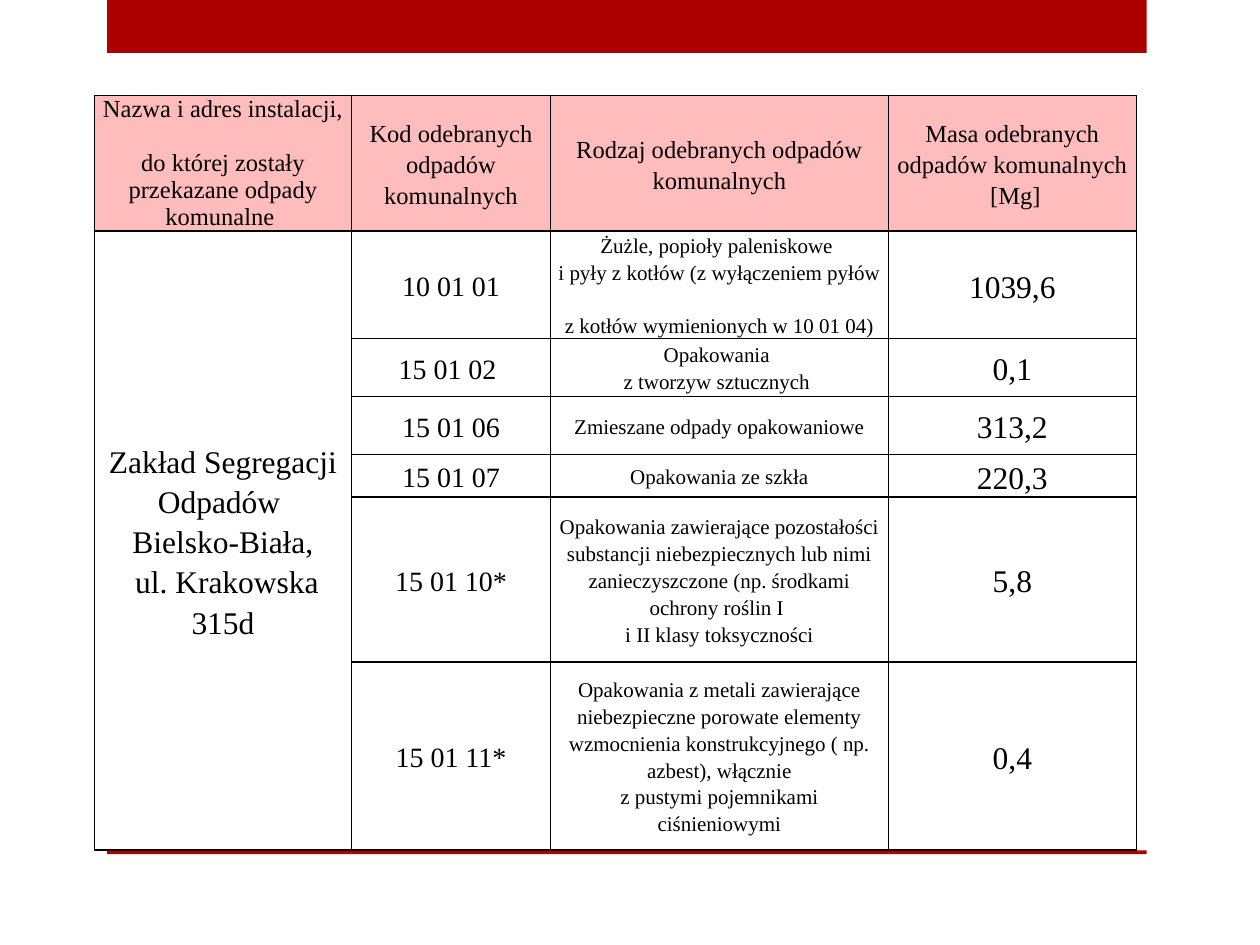
from copy import deepcopy

from lxml.etree import SubElement
from pptx import Presentation
from pptx.dml.color import RGBColor
from pptx.enum.shapes import MSO_SHAPE
from pptx.enum.text import MSO_ANCHOR, PP_ALIGN
from pptx.oxml.ns import qn
from pptx.util import Pt

FONT = "Times New Roman"
RED, PINK, BLACK = "AD0101", "FFBCBC", "000000"
BARS = [(0, 30.24), (486, 2.16)]
COLS = [146.88, 113.76, 192.96, 141.84]
ROWS = [64.8, 59.04, 33.12, 33.12, 24.48, 94.32, 107.28]
HEAD = [
    ["Nazwa i adres instalacji, \ndo której zostały przekazane odpady komunalne "],
    ["Kod odebranych odpadów komunalnych"],
    ["Rodzaj odebranych odpadów komunalnych"],
    ["Masa odebranych odpadów komunalnych", " [Mg]"],
]
PLANT = ["Zakład Segregacji Odpadów \nBielsko-Biała,", " ul. Krakowska 315d"]
WASTE = [
    ("10 01 01", ["Żużle, popioły paleniskowe \ni pyły z kotłów (z wyłączeniem pyłów \n"
                  "z kotłów wymienionych w 10 01 04)"], "1039,6"),
    ("15 01 02 ", ["Opakowania \nz tworzyw sztucznych "], "0,1"),
    ("15 01 06", ["Zmieszane odpady opakowaniowe"], "313,2"),
    ("15 01 07", ["Opakowania ze szkła"], "220,3"),
    ("15 01 10*", ["Opakowania zawierające pozostałości substancji niebezpiecznych lub nimi "
                   "zanieczyszczone (np. środkami ochrony roślin I ",
                   "i II klasy toksyczności"], "5,8"),
    ("15 01 11*", ["Opakowania z metali zawierające niebezpieczne porowate elementy wzmocnienia "
                   "konstrukcyjnego ( np. azbest), włącznie",
                   "z pustymi pojemnikami ciśnieniowymi"], "0,4"),
]


def color(code):
    return RGBColor.from_string(code)


def add_bar(slide, top, high):
    bar = slide.shapes.add_shape(MSO_SHAPE.RECTANGLE, Pt(61.2), Pt(top), Pt(594), Pt(high))
    bar.shadow.inherit = False
    bar.fill.solid()
    bar.fill.fore_color.rgb = color(RED)
    bar.line.fill.background()


def add_lines(para, text, size):
    for num, line in enumerate(text.split("\n")):
        if num:
            para.add_line_break()
            para._p[-1].append(deepcopy(run._r.rPr))
        run = para.add_run()
        run.text = line
        run.font.name = FONT
        run.font.size = Pt(size)
        run.font.color.rgb = color(BLACK)


def add_edges(cell):
    props = cell._tc.get_or_add_tcPr()
    for num, side in enumerate(("lnL", "lnR", "lnT", "lnB")):
        edge = SubElement(props, qn("a:" + side), w=str(Pt(1)))
        fill = SubElement(edge, qn("a:solidFill"))
        SubElement(fill, qn("a:srgbClr"), val=BLACK)
        props.remove(edge)
        props.insert(num, edge)


def fill_cell(cell, paras, size, space=1.15, anchor=MSO_ANCHOR.MIDDLE):
    cell.vertical_anchor = anchor
    frame = cell.text_frame
    for num, text in enumerate(paras):
        para = frame.add_paragraph() if num else frame.paragraphs[0]
        para.alignment = PP_ALIGN.CENTER
        if space:
            para.line_spacing = space
        add_lines(para, text, size)


def add_grid(slide):
    frame = slide.shapes.add_table(len(ROWS), len(COLS), Pt(54), Pt(54.72),
                                   Pt(sum(COLS)), Pt(sum(ROWS)))
    grid = frame.table
    grid.first_row = grid.horz_banding = False
    for col, wide in zip(grid.columns, COLS):
        col.width = Pt(wide)
    for num, (row, high) in enumerate(zip(grid.rows, ROWS)):
        row.height = Pt(high)
        for cell in row.cells:
            cell.margin_left = cell.margin_right = Pt(3.6)
            cell.margin_top = cell.margin_bottom = 0
            if num:
                cell.fill.background()
            else:
                cell.fill.solid()
                cell.fill.fore_color.rgb = color(PINK)
            add_edges(cell)
    for num, paras in enumerate(HEAD):
        fill_cell(grid.cell(0, num), paras, 14, 1.15 if num else None)
    grid.cell(1, 0).merge(grid.cell(len(WASTE), 0))
    fill_cell(grid.cell(1, 0), PLANT, 18)
    for num, (code, kind, mass) in enumerate(WASTE, 1):
        fill_cell(grid.cell(num, 1), [code], 16)
        fill_cell(grid.cell(num, 2), kind, 12,
                  anchor=MSO_ANCHOR.BOTTOM if num == 1 else MSO_ANCHOR.MIDDLE)
        fill_cell(grid.cell(num, 3), [mass], 18)


def main():
    deck = Presentation()
    deck.slide_width, deck.slide_height = Pt(720), Pt(540)
    slide = deck.slides.add_slide(deck.slide_layouts[6])
    for top, high in BARS:
        add_bar(slide, top, high)
    add_grid(slide)
    deck.save("out.pptx")


if __name__ == "__main__":
    main()
